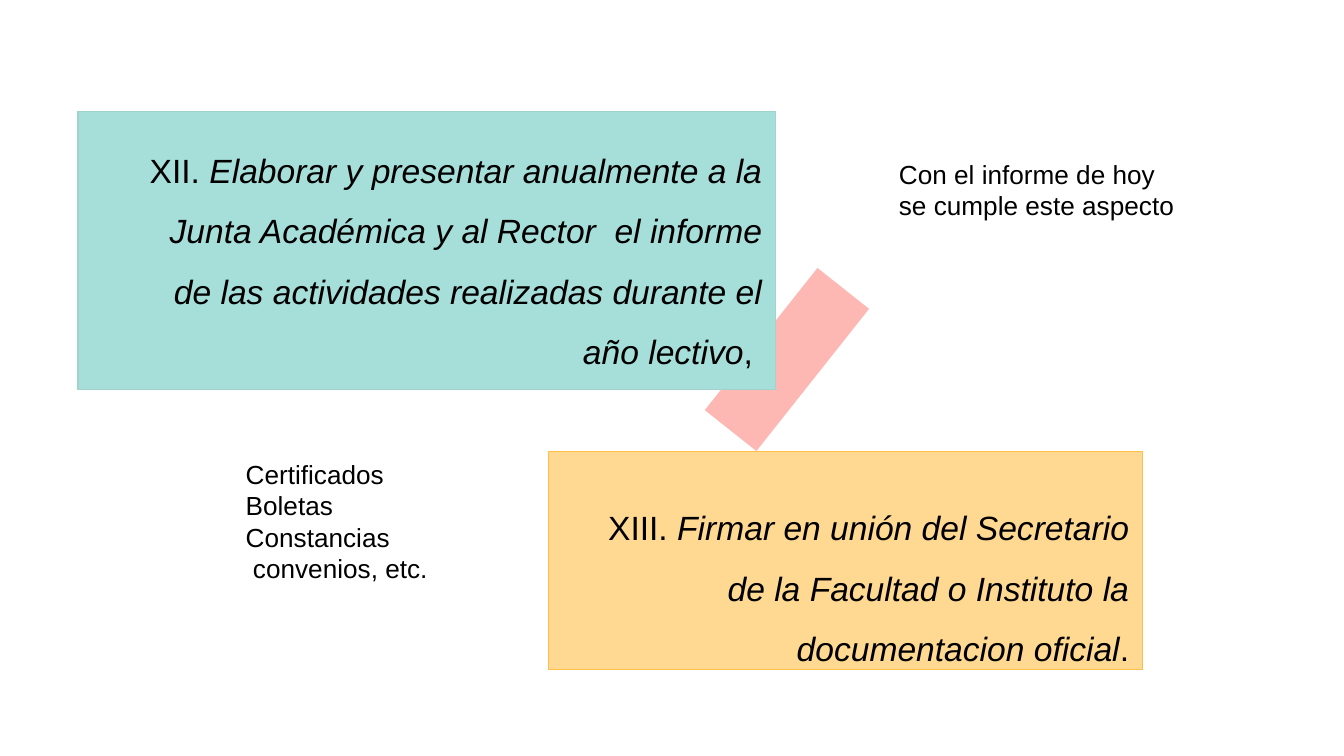
from dataclasses import dataclass

from pptx import Presentation
from pptx.dml.color import RGBColor
from pptx.enum.shapes import MSO_SHAPE
from pptx.enum.text import MSO_ANCHOR, PP_ALIGN
from pptx.util import Inches, Pt


@dataclass(frozen=True)
class Theme:
    font: str = "Arial"
    text: str = "000000"
    teal: str = "A6DFDA"
    teal_line: str = "9FD3CB"
    amber: str = "FFD992"
    amber_line: str = "FFBF49"
    pink: str = "FEB8B3"
    duty_size: int = 18
    note_size: int = 14


theme = Theme()


def add_box(box, fill, line=None, rotation=0):
    sp = slide.shapes.add_shape(MSO_SHAPE.RECTANGLE, *map(Inches, box))
    sp.shadow.inherit = False
    sp.rotation = rotation
    sp.fill.solid()
    sp.fill.fore_color.rgb = RGBColor.from_string(fill)
    if line:
        sp.line.color.rgb = RGBColor.from_string(line)
        sp.line.width = Pt(0.75)
    else:
        sp.line.fill.background()
    return sp


def write(p, text, size, italic=False, align=PP_ALIGN.LEFT, spacing=1.0):
    p.alignment = align
    p.line_spacing = spacing
    r = p.add_run()
    r.text = text
    r.font.name = theme.font
    r.font.size = Pt(size)
    r.font.italic = italic
    r.font.color.rgb = RGBColor.from_string(theme.text)


# A 16:9 slide
prs = Presentation()
prs.slide_width, prs.slide_height = Inches(10), Inches(10 * 9 / 16)
slide = prs.slides.add_slide(prs.slide_layouts[6])

# Two duties, with a slanted bar tucked under the upper one
firmar = add_box((4.08, 3.36, 4.42, 1.62), theme.amber, theme.amber_line)
add_box((5.18, 2.43, 1.35, 0.49), theme.pink, rotation=128.4)
informe = add_box((0.58, 0.83, 5.19, 2.07), theme.teal, theme.teal_line)

duties = [
    (firmar, 0.26, 0, "XIII. ",
     "Firmar en unión del Secretario de la Facultad o Instituto la documentacion oficial", "."),
    (informe, 0.1, 0.1, "XII. ",
     "Elaborar y presentar anualmente a la Junta Académica y al Rector  el informe "
     "de las actividades realizadas durante el año lectivo", ", "),
]
for sp, top, bottom, number, duty, ending in duties:
    tf = sp.text_frame
    tf.word_wrap = True
    tf.vertical_anchor = MSO_ANCHOR.MIDDLE
    tf.margin_left = tf.margin_right = Inches(0.1)
    tf.margin_top, tf.margin_bottom = Inches(top), Inches(bottom)
    for text, italic in ((number, False), (duty, True), (ending, False)):
        write(tf.paragraphs[0], text, theme.duty_size, italic=italic,
              align=PP_ALIGN.RIGHT, spacing=1.5)

# Hanging indent of the upper duty
pPr = informe.text_frame.paragraphs[0]._p.get_or_add_pPr()
pPr.set("marL", str(Inches(0.5)))
pPr.set("indent", str(Inches(-0.33)))

notes = [
    ((6.59, 1.13, 2.26, 0.57), ["Con el informe de hoy", "se cumple este aspecto"]),
    ((1.73, 3.36, 1.67, 1.04), ["Certificados", "Boletas", "Constancias", " convenios, etc."]),
]
for box, lines in notes:
    tf = slide.shapes.add_textbox(*map(Inches, box)).text_frame
    tf.word_wrap = False
    for i, text in enumerate(lines):
        p = tf.add_paragraph() if i else tf.paragraphs[0]
        write(p, text, theme.note_size)

prs.save("out.pptx")
